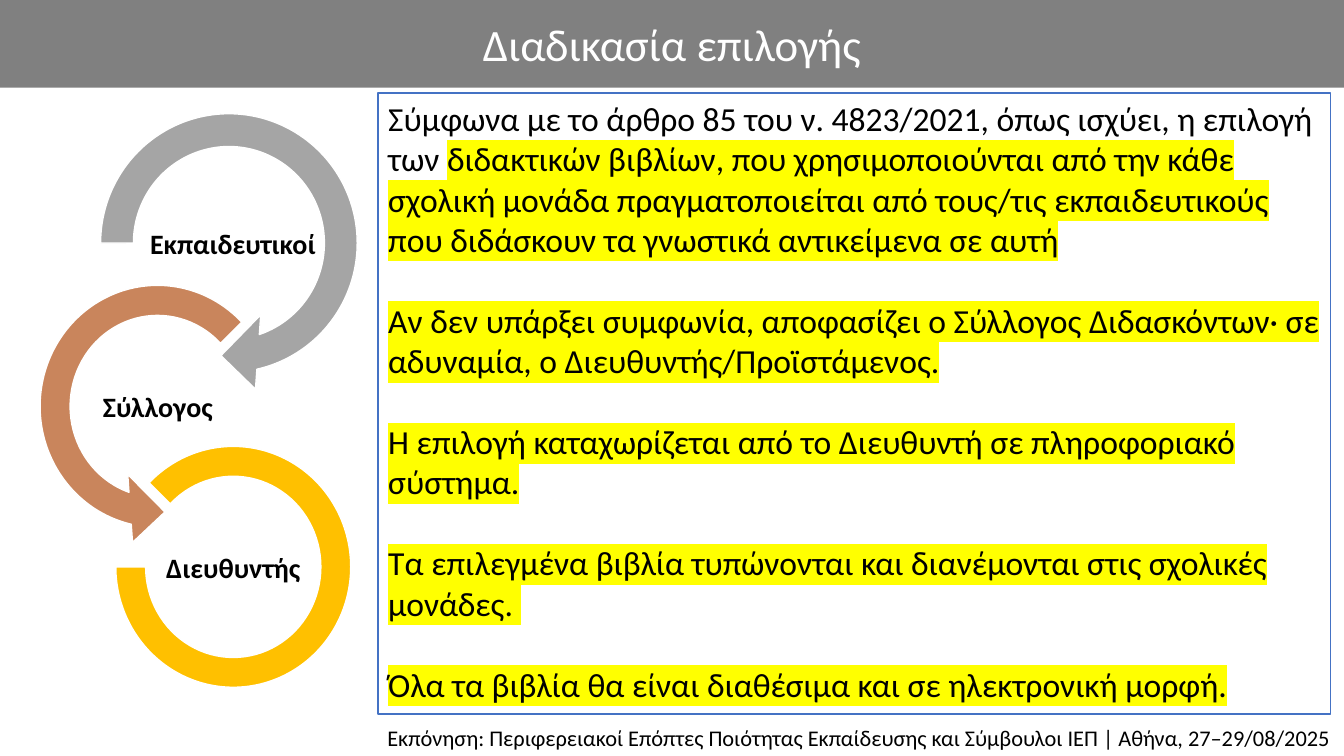
"""Builds the slide on the selection procedure for textbooks."""
from lxml.etree import SubElement
from pptx import Presentation
from pptx.dml.color import RGBColor
from pptx.enum.shapes import MSO_SHAPE
from pptx.enum.text import MSO_ANCHOR, MSO_AUTO_SIZE, PP_ALIGN
from pptx.oxml.ns import qn
from pptx.util import Cm, Pt

COLORS = {
    "white": "FFFFFF", "black": "000000", "banner": "808080", "frame": "4472C4",
    "marker": "FFFF00", "teachers": "A5A5A5", "board": "C9855C", "head": "FFC000",
}
FONT = "Calibri"
TITLE = "Διαδικασία επιλογής"
INTRO = "Σύμφωνα με το άρθρο 85 του ν. 4823/2021, όπως ισχύει, η επιλογή των "
MARKED = [
    "διδακτικών βιβλίων, που χρησιμοποιούνται από την κάθε σχολική μονάδα "
    "πραγματοποιείται από τους/τις εκπαιδευτικούς που διδάσκουν τα γνωστικά "
    "αντικείμενα σε αυτή",
    "Αν δεν υπάρξει συμφωνία, αποφασίζει ο Σύλλογος Διδασκόντων· σε αδυναμία, "
    "ο Διευθυντής/Προϊστάμενος.",
    "Η επιλογή καταχωρίζεται από το Διευθυντή σε πληροφοριακό σύστημα.",
    "Τα επιλεγμένα βιβλία τυπώνονται και διανέμονται στις σχολικές μονάδες. ",
    "Όλα τα βιβλία θα είναι διαθέσιμα και σε ηλεκτρονική μορφή.",
]
CREDIT = ("Εκπόνηση: Περιφερειακοί Επόπτες Ποιότητας Εκπαίδευσης "
          "και Σύμβουλοι ΙΕΠ | Αθήνα, 27–29/08/2025")
STEPS = [
    ("Εκπαιδευτικοί", "teachers", MSO_SHAPE.CIRCULAR_ARROW,
     (2.01, 2.34, 7.52, 7.57), (0.11, 11.42, 45, 108, 0.125), (3.38, 5.21, 4.98, 1.96)),
    ("Σύλλογος", "board", MSO_SHAPE.LEFT_CIRCULAR_ARROW,
     (0.53, 6.71, 6.88, 7.06), (0.11, 11.42, 63, 189, 0.125), (2.06, 9.3, 3.84, 1.96)),
    ("Διευθυντής", "head", MSO_SHAPE.BLOCK_ARC,
     (2.92, 11.25, 5.92, 6.07), (135, 108, 0.127), (3.96, 13.36, 3.84, 1.96)),
]


def color(name):
    return RGBColor.from_string(COLORS[name])


def paint(shape, name):
    shape.fill.solid()
    shape.fill.fore_color.rgb = color(name)


def place(shape, area):
    shape.left, shape.top, shape.width, shape.height = map(Cm, area)


def style(para, size, name="black", align=PP_ALIGN.LEFT, bold=False):
    para.alignment = align
    font = para.font
    font.name, font.size, font.bold = FONT, Pt(size), bold
    font.color.rgb = color(name)


def highlight(span):
    mark = SubElement(span.font._element, qn("a:highlight"))
    SubElement(mark, qn("a:srgbClr")).set("val", COLORS["marker"])


def add_title(page):
    box = page.shapes.title
    place(box, (0, 0, 33.87, 2.21))
    paint(box, "banner")
    frame = box.text_frame
    frame.text = TITLE
    frame.auto_size = MSO_AUTO_SIZE.NONE
    frame.vertical_anchor = MSO_ANCHOR.MIDDLE
    style(frame.paragraphs[0], 32, "white", PP_ALIGN.CENTER)


def add_body(page):
    box = page.placeholders[1]
    place(box, (9.53, 2.34, 24, 15.65))
    paint(box, "white")
    box.line.color.rgb = color("frame")
    box.line.width = Pt(1)
    frame = box.text_frame
    frame.auto_size = MSO_AUTO_SIZE.NONE
    frame.vertical_anchor = MSO_ANCHOR.TOP
    for index, text in enumerate(MARKED):
        para = frame.add_paragraph() if index else frame.paragraphs[0]
        properties = para._p.get_or_add_pPr()
        properties.set("marL", "0")
        properties.set("indent", "0")
        para.space_before = Pt(29 if index else 0)
        SubElement(properties, qn("a:buNone"))
        style(para, 24)
        if index == 0:
            para.add_run().text = INTRO
        span = para.add_run()
        span.text = text
        highlight(span)


def add_label(page, text, area, size, align, bold=False):
    box = page.shapes.add_textbox(*map(Cm, area))
    frame = box.text_frame
    frame.word_wrap = True
    frame.text = text
    style(frame.paragraphs[0], size, align=align, bold=bold)
    return box


def add_step(page, text, name, kind, area, adjustments, label_area):
    arc = page.shapes.add_shape(kind, *map(Cm, area))
    arc.shadow.inherit = False
    for index, value in enumerate(adjustments):
        arc.adjustments[index] = value
    paint(arc, name)
    arc.line.color.rgb = color("white")
    arc.line.width = Pt(1)
    frame = add_label(page, text, label_area, 20, PP_ALIGN.CENTER, True).text_frame
    frame.vertical_anchor = MSO_ANCHOR.MIDDLE
    frame.margin_left = frame.margin_right = Cm(0.03)
    frame.margin_top = frame.margin_bottom = Cm(0.03)
    frame.paragraphs[0].line_spacing = 0.9


def main():
    deck = Presentation()
    deck.slide_width, deck.slide_height = Cm(33.87), Cm(19.05)
    page = deck.slides.add_slide(deck.slide_layouts[1])
    add_title(page)
    for step in STEPS:
        add_step(page, *step)
    add_body(page)
    credit = add_label(page, CREDIT, (0.08, 18.06, 33.7, 0.99), 16, PP_ALIGN.RIGHT)
    paint(credit, "white")
    credit.text_frame.paragraphs[0].line_spacing = 1.1
    deck.save("out.pptx")


if __name__ == "__main__":
    main()
